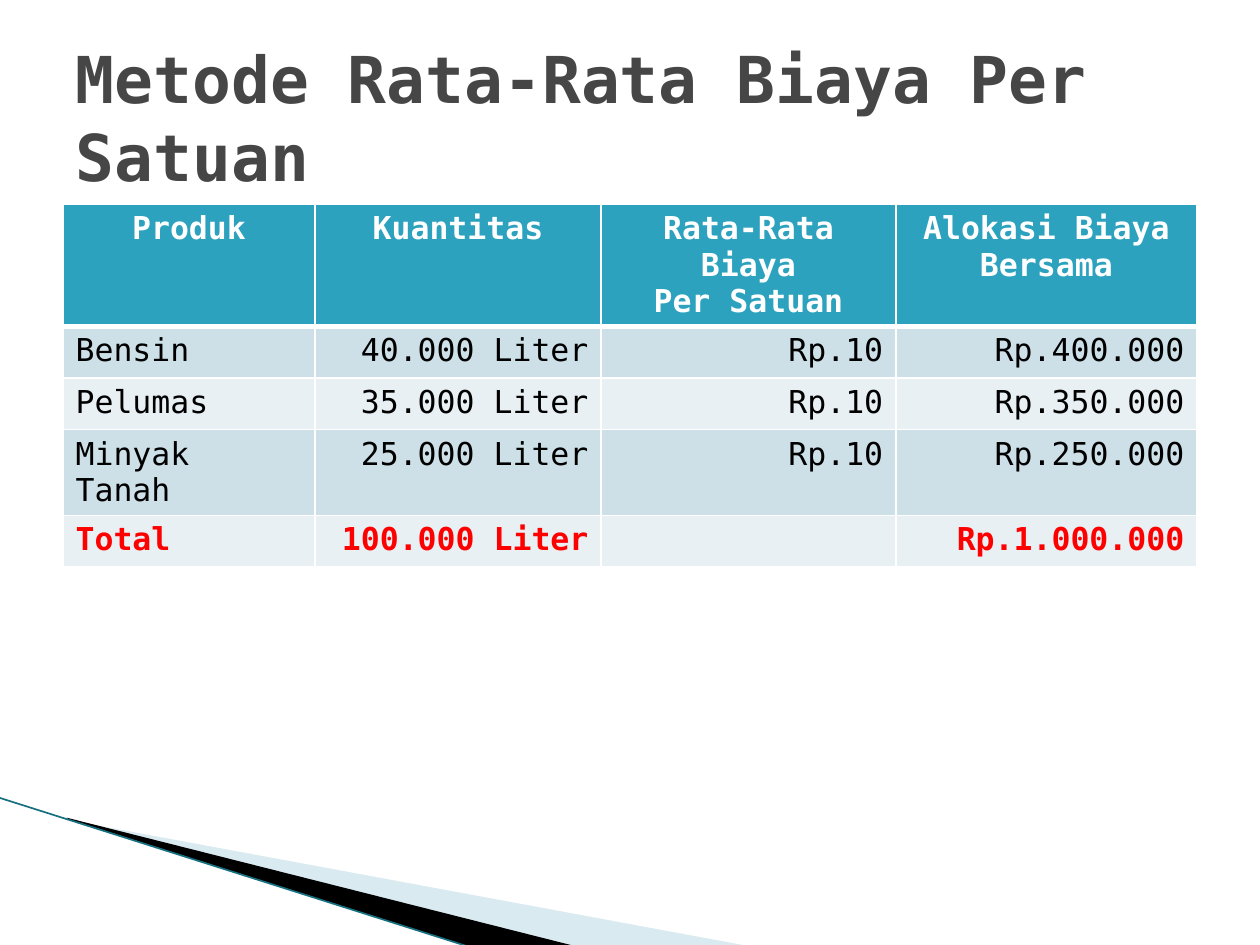
from dataclasses import dataclass

from lxml import etree
from pptx import Presentation
from pptx.dml.color import RGBColor
from pptx.enum.shapes import MSO_CONNECTOR
from pptx.enum.text import MSO_ANCHOR, MSO_AUTO_SIZE, PP_ALIGN
from pptx.oxml.ns import qn
from pptx.util import Inches, Pt

LEFT, CENTER, RIGHT = PP_ALIGN.LEFT, PP_ALIGN.CENTER, PP_ALIGN.RIGHT
MIDDLE = MSO_ANCHOR.MIDDLE
NO_AUTOFIT = MSO_AUTO_SIZE.NONE
STRAIGHT = MSO_CONNECTOR.STRAIGHT


@dataclass(frozen=True)
class Theme:
    font: str = "DejaVu Sans Mono"
    title: str = "464646"
    header: str = "2DA2BF"
    band_dark: str = "CDE0E8"
    band_light: str = "E8F0F4"
    white: str = "FFFFFF"
    black: str = "000000"
    total: str = "FF0000"
    pale_wedge: str = "A0CBDC"
    edge: str = "16707F"
    title_size: float = 36.9
    table_size: float = 18


theme = Theme()


def style_text(frame, size, color, bold, alignment):
    for paragraph in frame.paragraphs:
        paragraph.alignment = alignment
        for span in paragraph.runs:
            span.font.name = theme.font
            span.font.size = Pt(size)
            span.font.bold = bold
            span.font.color.rgb = RGBColor.from_string(color)


def add_border(cell, side, width):
    line = etree.SubElement(cell._tc.get_or_add_tcPr(), qn(f"a:ln{side}"), w=str(Pt(width)))
    fill = etree.SubElement(line, qn("a:solidFill"))
    etree.SubElement(fill, qn("a:srgbClr"), val=theme.white)


deck = Presentation()
deck.slide_width, deck.slide_height = Inches(10), Inches(7.5)
page = deck.slides.add_slide(deck.slide_layouts[5])

wedges = [
    (
        (0.78, 5.47, 4.16, 1.58),
        [(0.55, 6.51), (5.95, 7.51), (4.56, 7.51), (0.55, 6.5)],
        theme.pale_wedge,
        40,
    ),
    (
        (-0.06, 6.33, 4.16, 0.92),
        [(0.53, 6.49), (4.57, 7.51), (3.75, 7.52), (0.54, 6.5)],
        theme.black,
        100,
    ),
]
for bounds, points, color, opacity in wedges:
    corners = [(Inches(x), Inches(y)) for x, y in points]
    builder = page.shapes.build_freeform(*corners[0])
    builder.add_line_segments(corners[1:], close=True)
    wedge = builder.convert_to_shape()
    left, top, width, height = [Inches(length) for length in bounds]
    shift_x, shift_y = wedge.left - left, wedge.top - top
    outline = wedge._element.spPr.find(f".//{qn('a:pathLst')}")[0]
    outline.set("w", str(width))
    outline.set("h", str(height))
    for point in outline.iter(qn("a:pt")):
        point.set("x", str(int(point.get("x")) + shift_x))
        point.set("y", str(int(point.get("y")) + shift_y))
    wedge.left, wedge.top, wedge.width, wedge.height = left, top, width, height
    wedge.shadow.inherit = False
    wedge.line.fill.background()
    wedge.fill.solid()
    wedge.fill.fore_color.rgb = RGBColor.from_string(color)
    if opacity < 100:
        tint = wedge._element.spPr.find(f".//{qn('a:srgbClr')}")
        etree.SubElement(tint, qn("a:alpha"), val=str(opacity * 1000))

edge = page.shapes.add_connector(
    STRAIGHT, Inches(-0.01), Inches(6.33), Inches(3.74), Inches(7.52)
)
edge.line.color.rgb = RGBColor.from_string(theme.edge)
edge.line.width = Pt(0.95)
etree.SubElement(edge._element.spPr, qn("a:effectLst"))

rows = [
    ["Produk", "Kuantitas", "Rata-Rata Biaya\nPer Satuan", "Alokasi Biaya\nBersama"],
    ["Bensin", "40.000 Liter", "Rp.10", "Rp.400.000"],
    ["Pelumas", "35.000 Liter", "Rp.10", "Rp.350.000"],
    ["Minyak Tanah", "25.000 Liter", "Rp.10", "Rp.250.000"],
    ["Total", "100.000 Liter", "", "Rp.1.000.000"],
]
column_widths = [2, 2.27, 2.34, 2.39]
row_height = Inches(0.41)
table = page.shapes.add_table(
    len(rows), len(column_widths), Inches(0.5), Inches(1.62), Inches(9), row_height * len(rows)
).table
for column, width in zip(table.columns, column_widths):
    column.width = Inches(width)

for row_index, values in enumerate(rows):
    table.rows[row_index].height = row_height
    is_header = row_index == 0
    is_total = row_index == len(rows) - 1
    if is_header:
        background, color = theme.header, theme.white
    else:
        background = theme.band_dark if row_index % 2 else theme.band_light
        color = theme.total if is_total else theme.black
    for column_index, value in enumerate(values):
        cell = table.cell(row_index, column_index)
        if is_header:
            for side in "LRTB":
                add_border(cell, side, 3 if side == "B" else 1)
        cell.fill.solid()
        cell.fill.fore_color.rgb = RGBColor.from_string(background)
        cell.text_frame.text = value
        alignment = CENTER if is_header else RIGHT if column_index else LEFT
        style_text(cell.text_frame, theme.table_size, color, is_header or is_total, alignment)

title = page.shapes.title
title.left, title.top, title.width, title.height = (
    Inches(0.5), Inches(0.3), Inches(9), Inches(1.25)
)
title.text_frame.text = "Metode Rata-Rata Biaya Per Satuan"
title.text_frame.word_wrap = True
title.text_frame.auto_size = NO_AUTOFIT
title.text_frame.vertical_anchor = MIDDLE
style_text(title.text_frame, theme.title_size, theme.title, True, LEFT)

deck.save("out.pptx")
